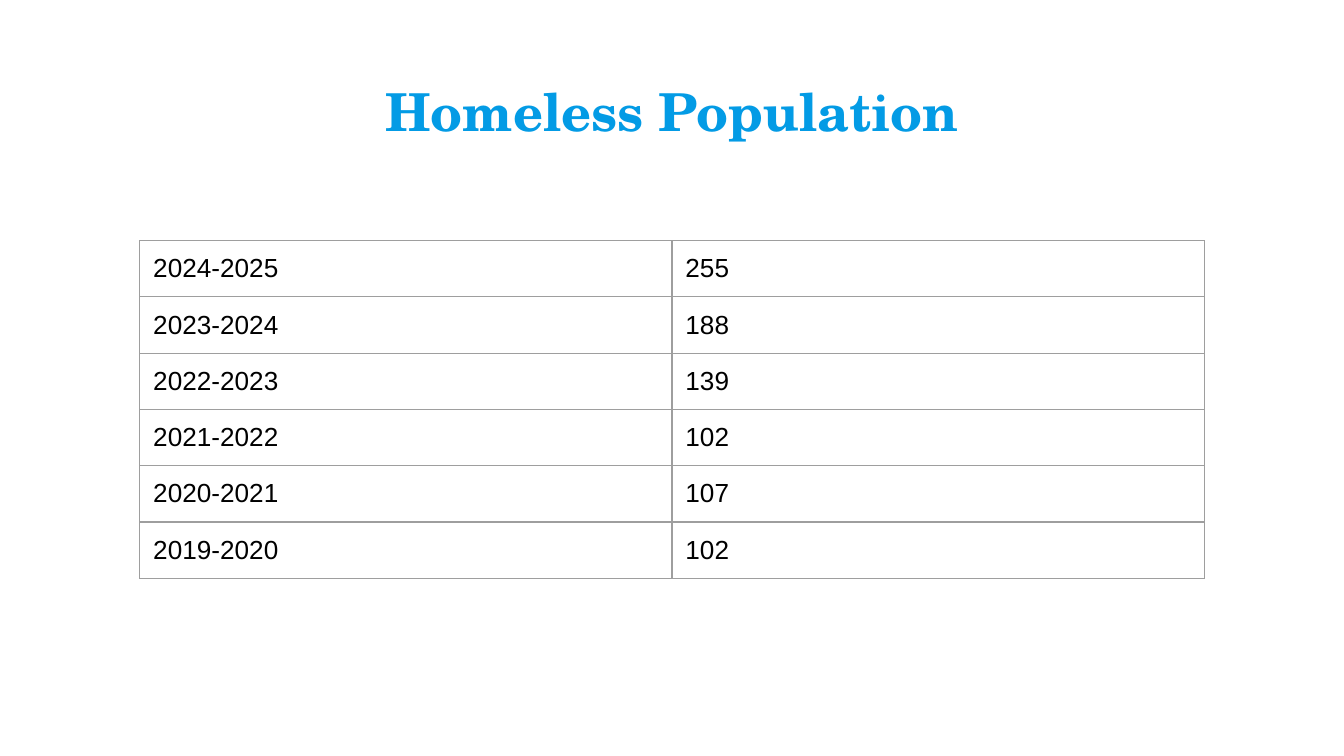
"""Build a slide with a table of the homeless population by school year."""
from lxml import etree
from pptx import Presentation
from pptx import util as u
from pptx.dml import color
from pptx.enum import text
from pptx.oxml import ns

ROWS = [
    ("2024-2025", "255"),
    ("2023-2024", "188"),
    ("2022-2023", "139"),
    ("2021-2022", "102"),
    ("2020-2021", "107"),
    ("2019-2020", "102"),
]


def rgb(value):
    return color.RGBColor.from_string(value)


def write(tf, words, font="Arial", size=14, fill="000000", bold=False,
          align=text.PP_ALIGN.LEFT):
    p = tf.paragraphs[0]
    p.alignment = align
    r = p.add_run()
    r.text = words
    r.font.name = font
    r.font.size = u.Pt(size)
    r.font.bold = bold
    r.font.color.rgb = rgb(fill)


class Deck:
    title_font = "TeX Gyre Schola"
    accent = "039BE5"
    border = "9E9E9E"
    border_width = 0.75
    margin = 0.1

    def __init__(self, prs):
        self.s = prs.slides.add_slide(prs.slide_layouts[5])

    def pad(self, box):
        box.margin_left = box.margin_right = u.Inches(self.margin)
        box.margin_top = box.margin_bottom = u.Inches(self.margin)

    def title(self, words, left, top, width, height):
        sp = self.s.shapes.title
        sp.left, sp.top = u.Inches(left), u.Inches(top)
        sp.width, sp.height = u.Inches(width), u.Inches(height)
        tf = sp.text_frame
        tf.word_wrap = True
        tf.auto_size = text.MSO_AUTO_SIZE.NONE
        tf.vertical_anchor = text.MSO_ANCHOR.TOP
        self.pad(tf)
        write(tf, words, font=self.title_font, size=28, fill=self.accent,
              bold=True, align=text.PP_ALIGN.CENTER)

    def table(self, rows, left, top, width, height):
        table = self.s.shapes.add_table(
            len(rows), len(rows[0]), u.Inches(left), u.Inches(top),
            u.Inches(width), u.Inches(height)).table
        table.first_row = table.horz_banding = False
        for i, row in enumerate(rows):
            for j, words in enumerate(row):
                cell = table.cell(i, j)
                self.pad(cell)
                write(cell.text_frame, words)
                cell.fill.background()
                self.outline(cell)

    def outline(self, cell):
        tc_pr = cell._tc.get_or_add_tcPr()
        for i, side in enumerate(("a:lnL", "a:lnR", "a:lnT", "a:lnB")):
            ln = etree.Element(ns.qn(side), w=str(u.Pt(self.border_width)))
            fill = etree.SubElement(ln, ns.qn("a:solidFill"))
            etree.SubElement(fill, ns.qn("a:srgbClr"), val=self.border)
            tc_pr.insert(i, ln)


def main():
    prs = Presentation()
    prs.slide_width = u.Inches(10)
    prs.slide_height = prs.slide_width * 9 // 16
    deck = Deck(prs)
    deck.title("Homeless Population", 0.34, 0.49, 9.32, 0.63)
    deck.table(ROWS, 1.04, 1.79, 7.92, 2.5)
    prs.save("out.pptx")


if __name__ == "__main__":
    main()
